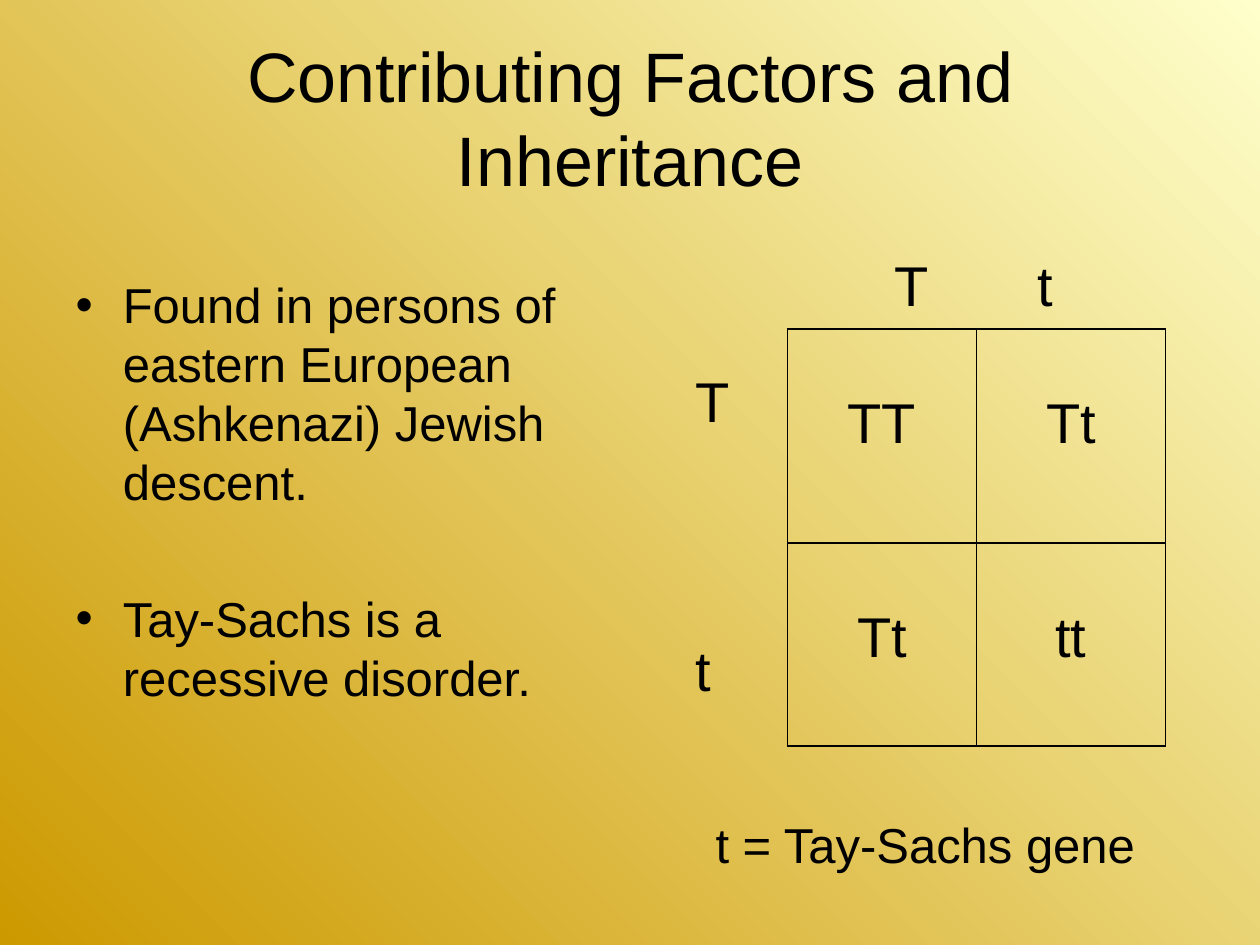
from dataclasses import dataclass

from lxml import etree
from pptx import Presentation
from pptx.dml.color import RGBColor
from pptx.enum import text
from pptx.oxml import ns
from pptx.util import Pt

COLORS = {"ink": "000000", "gold": "CC9900", "cream": "FFFFCC"}
FONT = "Arial"
ALIGN = text.PP_ALIGN


@dataclass
class Line:
    words: str
    size: float
    before: float = 0
    align: ALIGN = ALIGN.LEFT


@dataclass
class Label:
    left: float
    top: float
    width: float
    height: float
    lines: list[Line]
    tab: float = 0


TITLE = Line("Contributing Factors and Inheritance", 40, align=ALIGN.CENTER)
FACTS = [
    Line("Found in persons of eastern European (Ashkenazi) Jewish descent.", 28),
    Line("Tay-Sachs is a recessive disorder.", 28, before=44.7),
]
LABELS = [
    Label(504, 139.7, 131, 84, [Line("T\tt", 32)], tab=81.5),
    Label(390.2, 205.9, 34, 199.4, [Line("T", 32), Line("t", 32, before=115.2)]),
    Label(401.8, 462.2, 288, 41, [Line("t = Tay-Sachs gene", 28)]),
]
OFFSPRING = [["TT", "Tt"], ["Tt", "tt"]]
ROW_HEIGHTS = [122.3, 116]
COLUMN_WIDTH = 108


def color(name: str) -> RGBColor:
    return RGBColor.from_string(COLORS[name])


def place(shape, left: float, top: float, width: float, height: float) -> None:
    shape.left, shape.top = Pt(left), Pt(top)
    shape.width, shape.height = Pt(width), Pt(height)


def write(frame, lines: list[Line]) -> None:
    for index, line in enumerate(lines):
        para = frame.paragraphs[0] if index == 0 else frame.add_paragraph()
        para.alignment = line.align
        para.space_before = Pt(line.before)
        span = para.add_run()
        span.text = line.words
        span.font.name = FONT
        span.font.size = Pt(line.size)
        span.font.color.rgb = color("ink")


def add_bullet(para, indent: float) -> None:
    properties = para._p.get_or_add_pPr()
    properties.set("marL", str(Pt(indent)))
    properties.set("indent", str(-Pt(indent)))
    etree.SubElement(properties, ns.qn("a:buFont"), typeface=FONT)
    etree.SubElement(properties, ns.qn("a:buChar"), char="•")


def add_tab_stop(para, position: float) -> None:
    tabs = etree.SubElement(para._p.get_or_add_pPr(), ns.qn("a:tabLst"))
    etree.SubElement(tabs, ns.qn("a:tab"), pos=str(Pt(position)), algn="l")


def add_label(page, label: Label) -> None:
    box = page.shapes.add_textbox(
        Pt(label.left), Pt(label.top), Pt(label.width), Pt(label.height))
    box.text_frame.word_wrap = True
    write(box.text_frame, label.lines)
    if label.tab:
        add_tab_stop(box.text_frame.paragraphs[0], label.tab)


def add_borders(cell) -> None:
    properties = cell._tc.get_or_add_tcPr()
    for index, side in enumerate(("lnL", "lnR", "lnT", "lnB")):
        border = etree.Element(ns.qn(f"a:{side}"), w=str(Pt(1)))
        fill = etree.SubElement(border, ns.qn("a:solidFill"))
        etree.SubElement(fill, ns.qn("a:srgbClr"), val=COLORS["ink"])
        properties.insert(index, border)


def add_punnett_square(page, left: float, top: float) -> None:
    size = len(OFFSPRING)
    table = page.shapes.add_table(
        size, size, Pt(left), Pt(top),
        Pt(COLUMN_WIDTH * size), Pt(sum(ROW_HEIGHTS))).table
    table.first_row = table.horz_banding = False
    for column in table.columns:
        column.width = Pt(COLUMN_WIDTH)
    for row, height, genotypes in zip(table.rows, ROW_HEIGHTS, OFFSPRING):
        row.height = Pt(height)
        for cell, genotype in zip(row.cells, genotypes):
            cell.fill.background()
            cell.margin_top = Pt(36.4)
            write(cell.text_frame, [Line(genotype, 32, align=ALIGN.CENTER)])
            add_borders(cell)


def paint_background(page) -> None:
    fill = page.background.fill
    fill.gradient()
    fill.gradient_angle = 45
    for stop, name, position in zip(fill.gradient_stops, ("gold", "cream"), (0, 1)):
        stop.color.rgb = color(name)
        stop.position = position


def main() -> None:
    deck = Presentation()
    deck.slide_width, deck.slide_height = Pt(720), Pt(540)
    page = deck.slides.add_slide(deck.slide_layouts[1])
    paint_background(page)

    title, body = page.placeholders
    place(title, 36, 21.6, 648, 90)
    title.text_frame.vertical_anchor = text.MSO_ANCHOR.MIDDLE
    write(title.text_frame, [TITLE])

    place(body, 36, 153.4, 318.2, 356.4)
    write(body.text_frame, FACTS)
    for para in body.text_frame.paragraphs:
        add_bullet(para, 27)

    for frame in (title.text_frame, body.text_frame):
        frame.auto_size = text.MSO_AUTO_SIZE.NONE

    add_punnett_square(page, 450, 187.9)
    for label in LABELS:
        add_label(page, label)
    deck.save("out.pptx")


if __name__ == "__main__":
    main()
